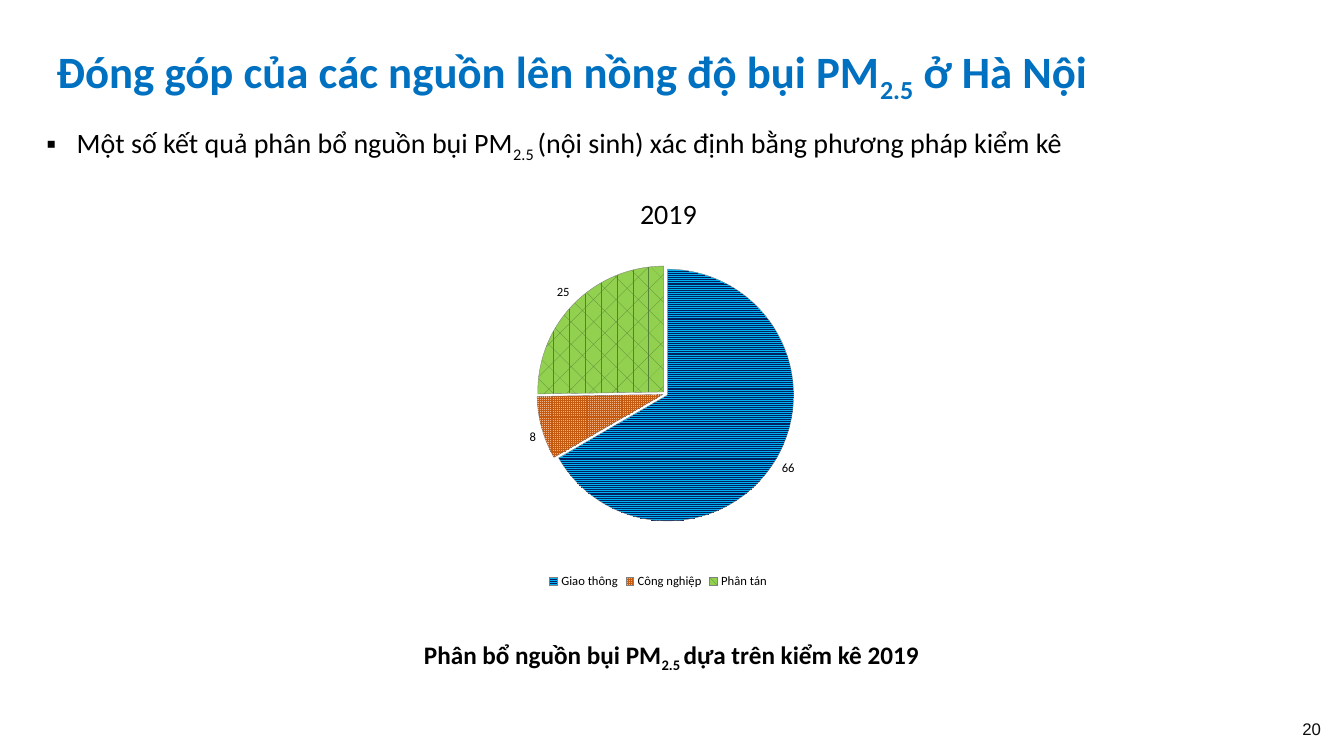
from lxml import etree
from pptx import Presentation
from pptx.chart.data import CategoryChartData
from pptx.dml.color import RGBColor
from pptx.enum.chart import XL_CHART_TYPE, XL_LABEL_POSITION, XL_LEGEND_POSITION
from pptx.enum.dml import MSO_PATTERN
from pptx.enum.text import MSO_ANCHOR, MSO_AUTO_SIZE, PP_ALIGN
from pptx.oxml import parse_xml
from pptx.oxml.ns import nsdecls, qn
from pptx.util import Inches, Pt

LEFT, CENTER = PP_ALIGN.LEFT, PP_ALIGN.CENTER
TOP, MIDDLE = MSO_ANCHOR.TOP, MSO_ANCHOR.MIDDLE
NO_AUTOFIT = MSO_AUTO_SIZE.NONE
PIE = XL_CHART_TYPE.PIE
OUTSIDE_END = XL_LABEL_POSITION.OUTSIDE_END
LEGEND_BOTTOM = XL_LEGEND_POSITION.BOTTOM
HORIZONTAL, GRID, DIVOT = MSO_PATTERN.LIGHT_HORIZONTAL, MSO_PATTERN.SMALL_GRID, MSO_PATTERN.DIVOT


def style_font(font, size, color="000000", bold=False, name="Calibri"):
    font.name = name
    font.size = Pt(size)
    font.bold = bold
    font.color.rgb = RGBColor.from_string(color)


def write_text(box, place, spans, align=LEFT, anchor=TOP, margin=0, indent=0, bullet=None, **style):
    box.left, box.top, box.width, box.height = [Inches(length) for length in place]
    frame = box.text_frame
    frame.word_wrap = True
    frame.auto_size = NO_AUTOFIT
    frame.vertical_anchor = anchor
    para = frame.paragraphs[0]
    para.alignment = align
    para.space_before = Pt(0)
    properties = para._p.get_or_add_pPr()
    properties.set("marL", str(Inches(margin)))
    properties.set("indent", str(Inches(indent)))
    if bullet:
        etree.SubElement(properties, qn("a:buFont")).set("typeface", "Arial")
        etree.SubElement(properties, qn("a:buChar")).set("char", bullet)
    style_font(para.font, **style)
    for position, text in enumerate(spans):
        span = para.add_run()
        span.text = text
        if position == 1:
            span._r.get_or_add_rPr().set("baseline", "-25000")
    return para


deck = Presentation()
deck.slide_width, deck.slide_height = Inches(13.33), Inches(7.5)
page = deck.slides.add_slide(deck.slide_layouts[1])
title, body = page.placeholders[0], page.placeholders[1]

heading = write_text(
    title, (0.36, 0.31, 12.8, 0.8),
    ["Đóng góp của các nguồn lên nồng độ bụi PM", "2.5", " ở Hà Nội"],
    anchor=MIDDLE, margin=0.1, size=32, color="0070C0", bold=True)
heading.line_spacing = 0.9

write_text(
    body, (0.36, 1.19, 11.34, 0.44),
    ["Một số kết quả phân bổ nguồn bụi PM", "2.5 ", "(nội sinh) xác định bằng phương pháp kiểm kê"],
    margin=0.3, indent=-0.3, bullet="▪", size=20)

sources = CategoryChartData(number_format="#,##0")
sources.categories = ["Giao thông", "Công nghiệp", "Phân tán"]
sources.add_series("Series 1", (66, 8, 25))
chart = page.shapes.add_chart(
    PIE, Inches(2.99), Inches(1.77), Inches(7.08), Inches(4.11), sources).chart
style_font(chart.font, 10)
chart.has_title = False
chart.has_legend = True
chart.legend.position = LEGEND_BOTTOM
chart.legend.include_in_layout = False
style_font(chart.legend.font, 9)

plot = chart.plots[0]
plot.vary_by_categories = True
series = plot.series[0]
slices = [(HORIZONTAL, "002060", "00B0F0"), (GRID, "C55A11", "F4B183"), (DIVOT, "548235", "92D050")]
for position, (pattern, foreground, background) in enumerate(slices):
    look = series.points[position].format
    look.fill.patterned()
    look.fill.pattern = pattern
    look.fill.fore_color.rgb = RGBColor.from_string(foreground)
    look.fill.back_color.rgb = RGBColor.from_string(background)
    look.line.color.rgb = RGBColor.from_string("808080")
    look.line.width = Pt(0.25)

series.format.line.width = Pt(0.25)
explosion = parse_xml(f'<c:explosion {nsdecls("c")} val="2"/>')
series._element.find(qn("c:spPr")).addnext(explosion)

labels = series.data_labels
labels.show_value = True
labels.position = OUTSIDE_END
labels.number_format = "#,##0"
labels.number_format_is_linked = False
style_font(labels.font, 9)

plot_area = chart._chartSpace.chart.plotArea
for layout in plot_area.findall(qn("c:layout")):
    plot_area.remove(layout)
plot_area.insert(0, parse_xml(
    f'<c:layout {nsdecls("c")}><c:manualLayout><c:layoutTarget val="inner"/>'
    '<c:xMode val="edge"/><c:yMode val="edge"/><c:x val="0.31"/><c:y val="0.21"/>'
    '<c:w val="0.4"/><c:h val="0.62"/></c:manualLayout></c:layout>'))

captions = [
    ((6.25, 1.9, 0.83, 0.44), ["2019"], {"size": 20}),
    ((3.41, 6.29, 6.5, 0.4), ["Phân bổ nguồn bụi PM", "2.5 ", "dựa trên kiểm kê 2019"],
     {"size": 18, "bold": True, "align": CENTER}),
    ((12.76, 7.03, 0.5, 0.4), ["20"],
     {"size": 12, "name": "Arial", "color": "0C0C0C", "align": CENTER, "anchor": MIDDLE}),
]
for place, spans, style in captions:
    box = page.shapes.add_textbox(0, 0, 0, 0)
    write_text(box, place, spans, **style)

deck.save("out.pptx")
